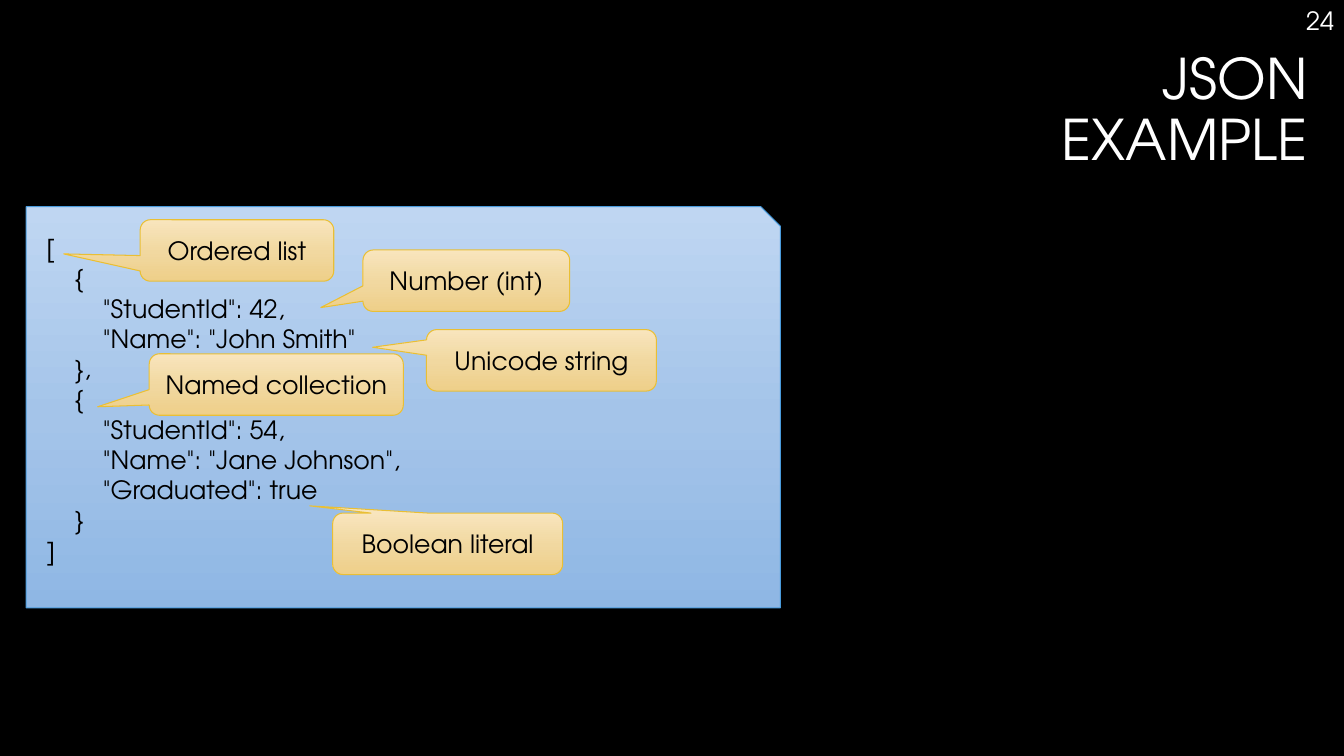
import copy
from dataclasses import dataclass

import pptx
import pptx.dml.color
import pptx.enum.shapes
import pptx.enum.text
import pptx.oxml.ns
import pptx.util

Inches = pptx.util.Inches
RGB = pptx.dml.color.RGBColor.from_string
ALIGN = pptx.enum.text.PP_ALIGN
ANCHOR = pptx.enum.text.MSO_ANCHOR
SHAPE = pptx.enum.shapes.MSO_SHAPE


@dataclass(frozen=True)
class Theme:
    font: str = "TeX Gyre Adventor"
    back: str = "000000"
    light: str = "FFFFFF"
    dark: str = "000000"
    panel: tuple = ("BFD6F2", "A4C4E9", "8FB7E4")
    panel_line: str = "4A9BDC"
    callout: tuple = ("F8E5BD", "F1D8A0", "EECF89")
    callout_line: str = "E9BF35"
    stops: tuple = (0, 0.52, 1)
    title_size: int = 40
    body_size: int = 18
    line_width: float = 0.75


THEME = Theme()
SLIDE_W, SLIDE_H = 13.33, 7.5
INDENT = 0.28
CALLOUT_H = 0.61

# Nesting level and text of each line
CODE = [
    (0, "["),
    (1, "{"),
    (2, '"StudentId": 42,'),
    (2, '"Name": "John Smith"'),
    (1, "},"),
    (1, "{"),
    (2, '"StudentId": 54,'),
    (2, '"Name": "Jane Johnson",'),
    (2, '"Graduated": true'),
    (1, "}"),
    (0, "]"),
]

# Label, left and top inside the panel, width, tip offset as shares of the callout
CALLOUTS = [
    ("Ordered list", 1.13, 0.13, 1.92, (-0.895, 0.056)),
    ("Number (int)", 3.34, 0.43, 2.05, (-0.704, 0.437)),
    ("Unicode string", 3.97, 1.22, 2.28, (-0.734, -0.213)),
    ("Named collection", 1.22, 1.46, 2.52, (-0.703, 0.362)),
    ("Boolean literal", 3.04, 3.04, 2.28, (-0.6, -0.618)),
]


def add_run(p, text, size, color):
    r = p.add_run()
    r.text = text
    r.font.name = THEME.font
    r.font.size = pptx.util.Pt(size)
    r.font.color.rgb = RGB(color)


def fill_gradient(sp, colors):
    """Fill from top to bottom with three colours."""
    sp.fill.gradient()
    sp.fill.gradient_angle = 270
    first = next(sp._element.spPr.iter(pptx.oxml.ns.qn("a:gs")))
    first.addnext(copy.deepcopy(first))
    for stop, position, color in zip(sp.fill.gradient_stops, THEME.stops, colors):
        stop.position = position
        stop.color.rgb = RGB(color)


def add_gradient_shape(slide, kind, box, adjustments, colors, line):
    sp = slide.shapes.add_shape(kind, *map(Inches, box))
    sp.shadow.inherit = False
    for i, value in enumerate(adjustments):
        sp.adjustments[i] = value
    fill_gradient(sp, colors)
    sp.line.color.rgb = RGB(line)
    sp.line.width = pptx.util.Pt(THEME.line_width)
    sp.text_frame.word_wrap = True
    return sp


def place_title(slide, box, lines):
    sp = slide.shapes.title
    sp.left, sp.top, sp.width, sp.height = map(Inches, box)
    tf = sp.text_frame
    tf.word_wrap = True
    tf.vertical_anchor = ANCHOR.TOP
    p = tf.paragraphs[0]
    p.alignment = ALIGN.RIGHT
    p.line_spacing = 0.9
    for i, line in enumerate(lines):
        if i:
            p.add_line_break()
        add_run(p, line, THEME.title_size, THEME.light)


def add_page_number(slide, box, number):
    tf = slide.shapes.add_textbox(*map(Inches, box)).text_frame
    tf.word_wrap = True
    p = tf.paragraphs[0]
    p.alignment = ALIGN.RIGHT
    add_run(p, number, THEME.body_size, THEME.light)


def add_code_panel(slide, box):
    sp = add_gradient_shape(slide, SHAPE.SNIP_1_RECTANGLE, box, [0.049],
                            THEME.panel, THEME.panel_line)
    tf = sp.text_frame
    tf.vertical_anchor = ANCHOR.TOP
    tf.margin_left = tf.margin_right = tf.margin_bottom = Inches(0.2)
    tf.margin_top = Inches(0.16)
    for i, (level, text) in enumerate(CODE):
        p = tf.add_paragraph() if i else tf.paragraphs[0]
        p.alignment = ALIGN.LEFT
        p._p.get_or_add_pPr().set("marL", str(Inches(level * INDENT)))
        add_run(p, text, THEME.body_size, THEME.dark)


def add_callouts(slide, box):
    left, top = box[:2]
    for label, dx, dy, width, tip in CALLOUTS:
        sp = add_gradient_shape(slide, SHAPE.ROUNDED_RECTANGULAR_CALLOUT,
                                (left + dx, top + dy, width, CALLOUT_H),
                                (*tip, 0.167), THEME.callout, THEME.callout_line)
        tf = sp.text_frame
        tf.vertical_anchor = ANCHOR.MIDDLE
        p = tf.paragraphs[0]
        p.alignment = ALIGN.CENTER
        add_run(p, label, THEME.body_size, THEME.dark)


def build_example_slide(prs):
    slide = prs.slides.add_slide(prs.slide_layouts[5])
    slide.background.fill.solid()
    slide.background.fill.fore_color.rgb = RGB(THEME.back)
    margin = 0.26
    place_title(slide, (margin, 0.46, SLIDE_W - 2 * margin, 1.41), ["JSON", "EXAMPLE"])
    add_page_number(slide, (SLIDE_W - 2.88, 0, 2.88, 0.4), "24")
    panel = (margin, 2.05, 7.48, 3.98)
    add_code_panel(slide, panel)
    add_callouts(slide, panel)


def main():
    prs = pptx.Presentation()
    prs.slide_width, prs.slide_height = Inches(SLIDE_W), Inches(SLIDE_H)
    build_example_slide(prs)
    prs.save("out.pptx")


if __name__ == "__main__":
    main()
